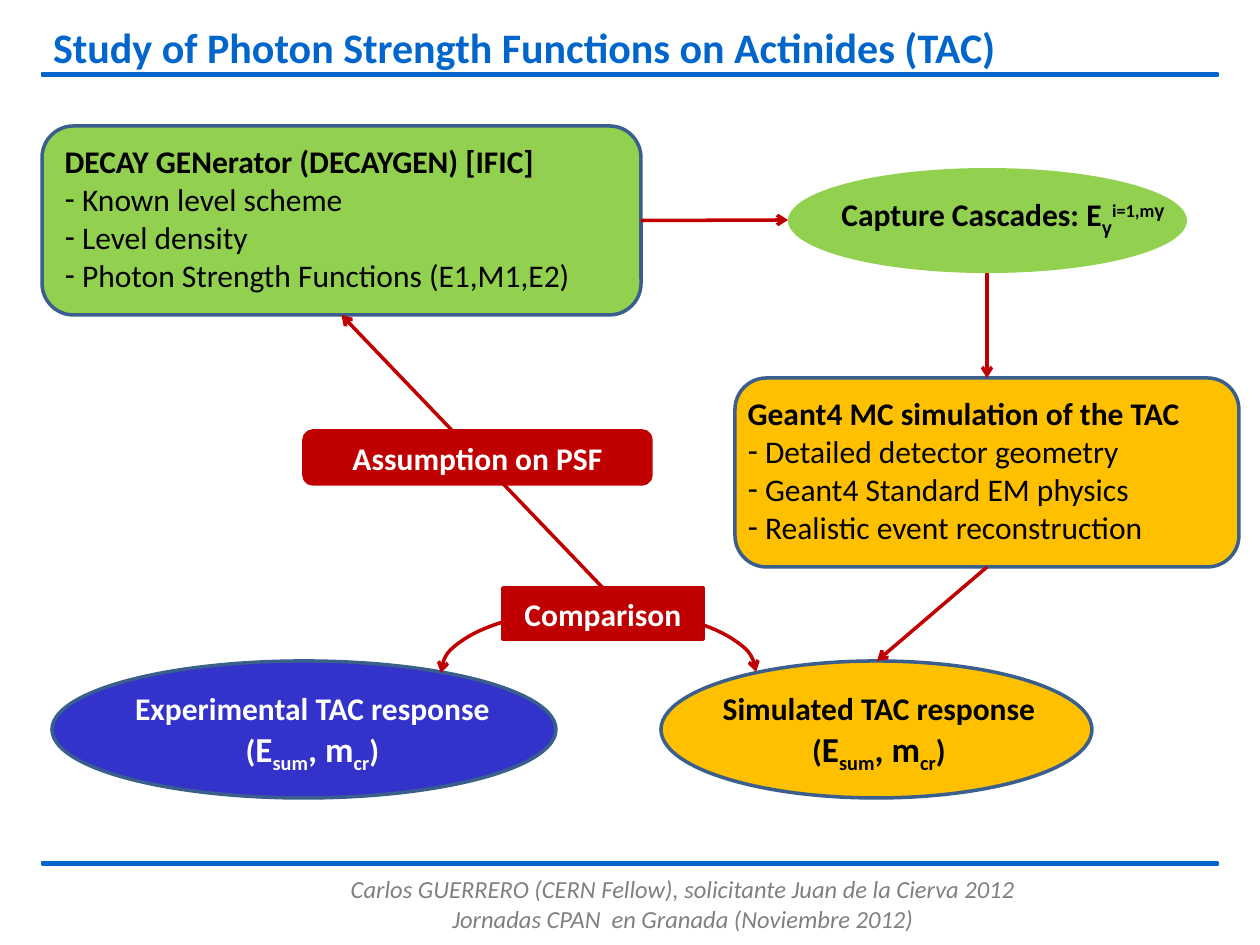
from dataclasses import dataclass

from lxml.etree import SubElement
from pptx import Presentation
from pptx.dml.color import RGBColor
from pptx.enum.shapes import MSO_CONNECTOR, MSO_SHAPE as Shape
from pptx.enum.text import MSO_ANCHOR as Anchor, MSO_AUTO_SIZE as AutoSize, PP_ALIGN as Align
from pptx.oxml.ns import qn
from pptx.util import Emu, Pt

PX_PER_INCH = 126
COLORS = {
    "title": "0066CC", "footer": "808080", "black": "000000", "white": "FFFFFF",
    "green": "92D050", "amber": "FFC000", "blue": "3333CC", "red": "C00000",
    "outline": "3A5F8C",
}


@dataclass(frozen=True)
class Box:
    x: int
    y: int
    w: int
    h: int


@dataclass(frozen=True)
class Node:
    kind: Shape
    box: Box
    fill: str
    line: str | None = "outline"
    label: str = ""


@dataclass(frozen=True)
class Run:
    text: str
    size: int = 18
    base: int = 0
    font: str = "Calibri"


@dataclass(frozen=True)
class Label:
    box: Box
    lines: list[list[Run]]
    color: str = "black"
    align: Align = Align.CENTER


@dataclass(frozen=True)
class Arrow:
    """A line between two points; start and end name (node, side) joins."""
    x1: int
    y1: int
    x2: int
    y2: int
    start: tuple[str, int] | None = None
    end: tuple[str, int] | None = None


RESPONSE = [Run("("), Run("E", 20), Run("sum", 20, -25), Run(", m", 20),
            Run("cr", 20, -25), Run(")")]
RULES = [Box(42, 862, 1176, 3), Box(42, 73, 1176, 3)]
NODES = {
    "cascades": Node(Shape.OVAL, Box(788, 168, 399, 105), "green", None),
    "decay": Node(Shape.ROUNDED_RECTANGLE, Box(42, 126, 599, 189), "green"),
    "geant": Node(Shape.ROUNDED_RECTANGLE, Box(735, 378, 504, 189), "amber"),
    "simulated": Node(Shape.OVAL, Box(661, 661, 431, 137), "amber"),
    "experimental": Node(Shape.OVAL, Box(52, 661, 504, 137), "blue"),
}
TAGS = {
    "comparison": Node(Shape.RECTANGLE, Box(503, 588, 200, 51), "red", "red", "Comparison"),
    "assumption": Node(Shape.ROUNDED_RECTANGLE, Box(304, 431, 347, 53), "red", "red",
                       "Assumption on PSF"),
}
LISTS = [
    (Box(52, 136, 588, 165), "DECAY GENerator (DECAYGEN) [IFIC]",
     ["Known level scheme", "Level density", "Photon Strength Functions (E1,M1,E2)"]),
    (Box(735, 388, 504, 165), "Geant4 MC simulation of the TAC",
     ["Detailed detector geometry", "Geant4 Standard EM physics",
      "Realistic event reconstruction"]),
]
LABELS = [
    Label(Box(829, 189, 357, 50),
          [[Run("Capture Cascades: E"), Run("γ", base=-25, font="Arial"),
            Run("i=1,m", base=30), Run("γ", base=30, font="Arial")]], align=Align.LEFT),
    Label(Box(709, 683, 340, 93), [[Run("Simulated TAC response")], RESPONSE]),
    Label(Box(118, 683, 389, 93), [[Run("Experimental TAC response")], RESPONSE], "white"),
]
ARROWS = [
    Arrow(603, 588, 342, 315, ("comparison", 0), ("decay", 2)),
    Arrow(641, 220, 788, 220, ("decay", 3)),
    Arrow(987, 273, 987, 378, end=("geant", 0)),
    Arrow(987, 567, 877, 661, start=("geant", 2)),
]


def px(n: int) -> Emu:
    return Emu(round(n * 914400 / PX_PER_INCH))


def rgb(name: str) -> RGBColor:
    return RGBColor.from_string(COLORS[name])


def bounds(box: Box) -> tuple[Emu, ...]:
    return px(box.x), px(box.y), px(box.w), px(box.h)


def place(sp, box: Box) -> None:
    sp.left, sp.top, sp.width, sp.height = bounds(box)


def style(p, color: str, size: float = 18, bold: bool = True, italic: bool = False) -> None:
    for r in p.runs:
        r.font.name, r.font.size = "Calibri", Pt(size)
        r.font.bold, r.font.italic = bold, italic
        r.font.color.rgb = rgb(color)


def set_line(sp, color: str, width: float = 2) -> None:
    sp.line.color.rgb, sp.line.width = rgb(color), Pt(width)


def add_arrowheads(sp, *ends: str) -> None:
    ln = sp.line._get_or_add_ln()
    for end in ends:
        SubElement(ln, qn(f"a:{end}"), type="arrow")


def add_node(slide, node: Node, width: float = 2):
    sp = slide.shapes.add_shape(node.kind, *bounds(node.box))
    sp.shadow.inherit = False
    sp.fill.solid()
    sp.fill.fore_color.rgb = rgb(node.fill)
    if node.line:
        set_line(sp, node.line, width)
    else:
        sp.line.fill.background()
    if node.label:
        tf = sp.text_frame
        tf.text, tf.vertical_anchor = node.label, Anchor.MIDDLE
        tf.paragraphs[0].alignment = Align.CENTER
        style(tf.paragraphs[0], "white")
    return sp


def add_label(slide, label: Label) -> None:
    tf = slide.shapes.add_textbox(*bounds(label.box)).text_frame
    tf.word_wrap, tf.auto_size = False, AutoSize.SHAPE_TO_FIT_TEXT
    for i, line in enumerate(label.lines):
        p = tf.add_paragraph() if i else tf.paragraphs[0]
        p.alignment = label.align
        for run in line:
            p.add_run().text = run.text
        style(p, label.color)
        for r, run in zip(p.runs, line):
            r.font.name, r.font.size = run.font, Pt(run.size)
            if run.base:
                r.font._element.set("baseline", str(run.base * 1000))


def fill_list(sp, box: Box, heading: str, items: list[str]) -> None:
    place(sp, box)
    tf = sp.text_frame
    tf.text = "\n".join([heading] + [f" {item}" for item in items])
    tf.auto_size, tf.vertical_anchor = AutoSize.NONE, Anchor.TOP
    for i, p in enumerate(tf.paragraphs):
        pPr = p._p.get_or_add_pPr()
        pPr.set("marL", "0")
        pPr.set("indent", "0")
        if i:
            SubElement(pPr, qn("a:buFontTx"))
            SubElement(pPr, qn("a:buChar"), char="-")
        else:
            SubElement(pPr, qn("a:buNone"))
        p.space_before = Pt(0)
        style(p, "black", bold=i == 0)


def add_arrow(slide, arrow: Arrow, nodes: dict) -> None:
    cx = slide.shapes.add_connector(MSO_CONNECTOR.STRAIGHT, px(arrow.x1), px(arrow.y1),
                                    px(arrow.x2), px(arrow.y2))
    if arrow.start:
        cx.begin_connect(nodes[arrow.start[0]], arrow.start[1])
    if arrow.end:
        cx.end_connect(nodes[arrow.end[0]], arrow.end[1])
    set_line(cx, "red")
    add_arrowheads(cx, "tailEnd")
    SubElement(cx._element.spPr, qn("a:effectLst"))


def add_comparison_arc(slide) -> None:
    sp = slide.shapes.add_shape(Shape.ARC, *bounds(Box(441, 609, 315, 126)))
    sp.shadow.inherit = False
    sp.rotation = 180
    sp.adjustments[0], sp.adjustments[1] = 215.8, 107.95
    sp.fill.background()
    set_line(sp, "red")
    add_arrowheads(sp, "headEnd", "tailEnd")


def add_footer(slide) -> None:
    tf = slide.shapes.add_textbox(*bounds(Box(179, 868, 1008, 78))).text_frame
    tf.word_wrap, tf.margin_bottom = True, px(13)
    tf.text = ("Carlos GUERRERO (CERN Fellow), solicitante Juan de la Cierva 2012\n"
               "Jornadas CPAN  en Granada (Noviembre 2012)")
    for p in tf.paragraphs:
        p.alignment = Align.CENTER
        style(p, "footer", 14, bold=False, italic=True)


def set_title(sp) -> None:
    place(sp, Box(42, 21, 1181, 53))
    tf = sp.text_frame
    tf.text = "Study of Photon Strength Functions on Actinides (TAC)"
    tf.auto_size, tf.vertical_anchor = AutoSize.NONE, Anchor.TOP
    tf.margin_left = tf.margin_right = px(11)
    tf.margin_top = tf.margin_bottom = px(5)
    p = tf.paragraphs[0]
    p.alignment, p.line_spacing = Align.LEFT, 0.93
    style(p, "title", 24)


def main() -> None:
    prs = Presentation()
    prs.slide_width, prs.slide_height = px(1260), px(945)
    slide = prs.slides.add_slide(prs.slide_layouts[3])
    for rule in RULES:
        add_node(slide, Node(Shape.RECTANGLE, rule, "title", "title"), 1.5)
    add_footer(slide)
    set_title(slide.shapes.title)
    nodes = {name: add_node(slide, node) for name, node in NODES.items()}
    for idx, content in enumerate(LISTS, start=1):
        sp = slide.placeholders[idx]
        fill_list(sp, *content)
        slide.shapes._spTree.append(sp._element)  # bring in front of its box
    for label in LABELS:
        add_label(slide, label)
    add_comparison_arc(slide)
    nodes["comparison"] = add_node(slide, TAGS["comparison"])
    for arrow in ARROWS:
        add_arrow(slide, arrow, nodes)
    add_node(slide, TAGS["assumption"])
    prs.save("out.pptx")


if __name__ == "__main__":
    main()
